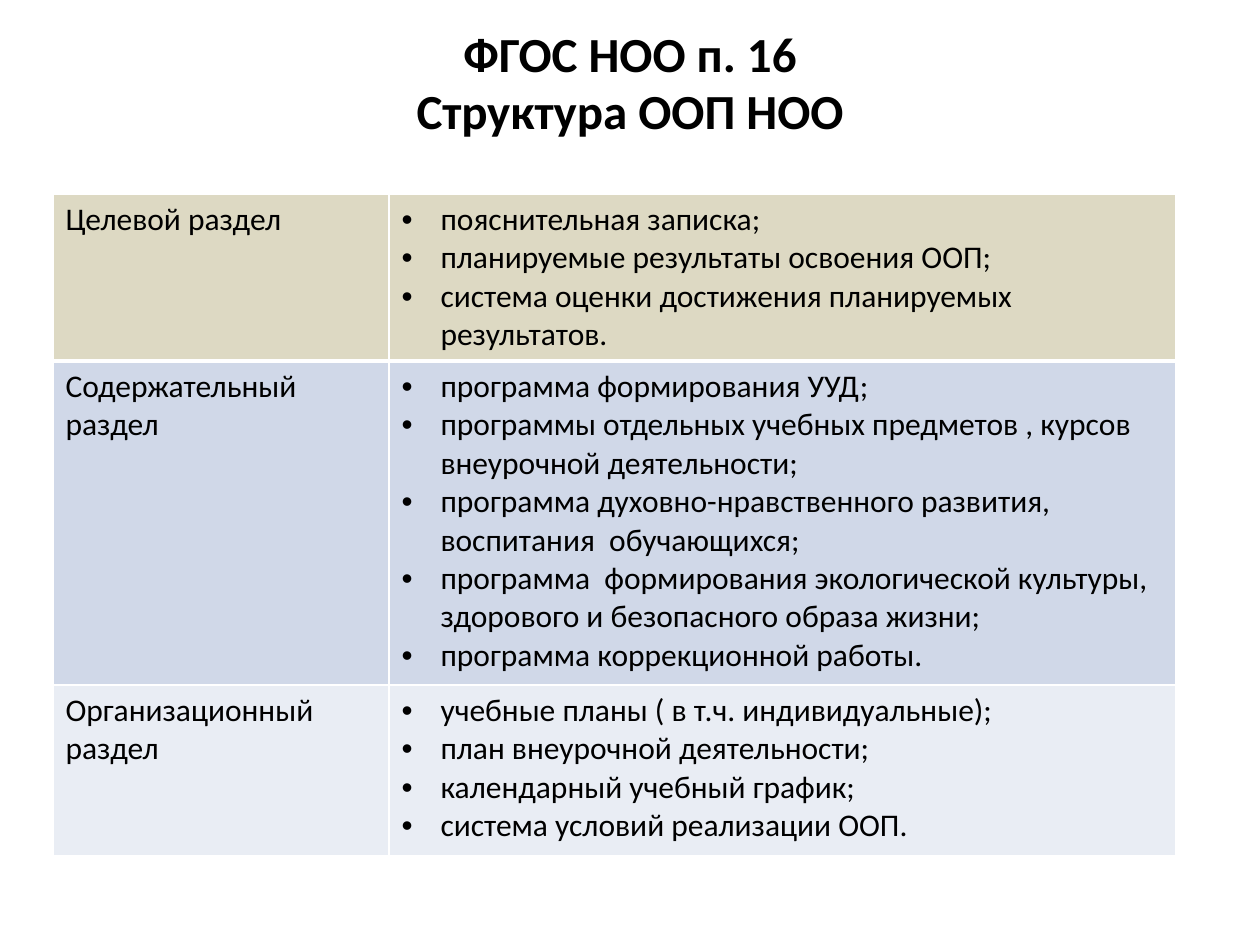
"""Builds the slide on the structure of the basic education programme."""
from dataclasses import dataclass

import lxml.etree
import pptx
import pptx.dml.color
import pptx.enum.text
import pptx.oxml.ns
import pptx.util

EMU_PER_PX = 914400 / 126
FONT = "Calibri"
COLORS = {
    "text": "000000",
    "border": "FFFFFF",
    "target": "DDD9C3",
    "content": "D0D8E8",
    "organisation": "E9EDF4",
}
TITLE_LINES = ("ФГОС НОО п. 16", "Структура ООП НОО")
COLUMN_WIDTHS = (336, 787)
BULLET_INDENT = 39


@dataclass(frozen=True)
class Section:
    name: str
    items: tuple[str, ...]
    fill: str
    height: int
    top_border: int = 1
    bottom_border: int = 1


SECTIONS = (
    Section("Целевой раздел", (
        "пояснительная записка;",
        "планируемые результаты освоения ООП;",
        "система оценки достижения планируемых результатов.",
    ), "target", 167, bottom_border=3),
    Section("Содержательный раздел", (
        "программа формирования УУД;",
        "программы отдельных учебных предметов , курсов внеурочной деятельности;",
        "программа духовно-нравственного развития, воспитания  обучающихся;",
        "программа  формирования экологической культуры, здорового и безопасного образа жизни;",
        "программа коррекционной работы.",
    ), "content", 324, top_border=3),
    Section("Организационный раздел", (
        "учебные планы ( в т.ч. индивидуальные);",
        "план внеурочной деятельности;",
        "календарный учебный график;",
        "система условий реализации ООП.",
    ), "organisation", 171),
)


def px(n: int) -> pptx.util.Emu:
    return pptx.util.Emu(round(n * EMU_PER_PX))


def rgb(name: str) -> pptx.dml.color.RGBColor:
    return pptx.dml.color.RGBColor.from_string(COLORS[name])


def add_run(p, text: str, size: int, bold: bool = False) -> None:
    r = p.add_run()
    r.text = text
    r.font.name = FONT
    r.font.size = pptx.util.Pt(size)
    r.font.bold = bold
    r.font.color.rgb = rgb("text")


def add_bullet(p) -> None:
    pPr = p._p.get_or_add_pPr()
    pPr.set("marL", str(px(BULLET_INDENT)))
    pPr.set("indent", str(-px(BULLET_INDENT)))
    font = lxml.etree.SubElement(pPr, pptx.oxml.ns.qn("a:buFont"))
    font.set("typeface", "Arial")
    bullet = lxml.etree.SubElement(pPr, pptx.oxml.ns.qn("a:buChar"))
    bullet.set("char", "•")


def set_borders(cell, top: int, bottom: int) -> None:
    tcPr = cell._tc.get_or_add_tcPr()
    widths = {"a:lnL": 1, "a:lnR": 1, "a:lnT": top, "a:lnB": bottom}
    for i, (tag, width) in enumerate(widths.items()):
        ln = lxml.etree.Element(pptx.oxml.ns.qn(tag), w=str(pptx.util.Pt(width)))
        fill = lxml.etree.SubElement(ln, pptx.oxml.ns.qn("a:solidFill"))
        color = lxml.etree.SubElement(fill, pptx.oxml.ns.qn("a:srgbClr"))
        color.set("val", COLORS["border"])
        tcPr.insert(i, ln)


def fill_cell(cell, section: Section, lines: tuple[str, ...], bulleted: bool) -> None:
    cell.fill.solid()
    cell.fill.fore_color.rgb = rgb(section.fill)
    set_borders(cell, section.top_border, section.bottom_border)
    tf = cell.text_frame
    for i, line in enumerate(lines):
        p = tf.add_paragraph() if i else tf.paragraphs[0]
        if bulleted:
            add_bullet(p)
        add_run(p, line, 18)


def add_title(s) -> None:
    sp = s.shapes.title
    sp.left, sp.top, sp.width, sp.height = px(63), px(21), px(1134), px(174)
    tf = sp.text_frame
    tf.auto_size = pptx.enum.text.MSO_AUTO_SIZE.NONE
    tf.vertical_anchor = pptx.enum.text.MSO_ANCHOR.TOP
    p = tf.paragraphs[0]
    p.alignment = pptx.enum.text.PP_ALIGN.CENTER
    p.line_spacing = 0.97
    for i, line in enumerate(TITLE_LINES):
        if i:
            p.add_line_break()
        add_run(p, line, 28, bold=True)


def add_sections(s) -> None:
    height = sum(section.height for section in SECTIONS)
    table = s.shapes.add_table(
        len(SECTIONS), len(COLUMN_WIDTHS),
        px(53), px(194), px(sum(COLUMN_WIDTHS)), px(height)).table
    table.first_row = False
    table.horz_banding = False
    for column, width in zip(table.columns, COLUMN_WIDTHS):
        column.width = px(width)
    for row, section in zip(table.rows, SECTIONS):
        row.height = px(section.height)
        fill_cell(row.cells[0], section, (section.name,), False)
        fill_cell(row.cells[1], section, section.items, True)


def main() -> None:
    prs = pptx.Presentation()
    prs.slide_width, prs.slide_height = px(1260), px(945)
    s = prs.slides.add_slide(prs.slide_layouts[5])
    add_title(s)
    add_sections(s)
    prs.save("out.pptx")


if __name__ == "__main__":
    main()
